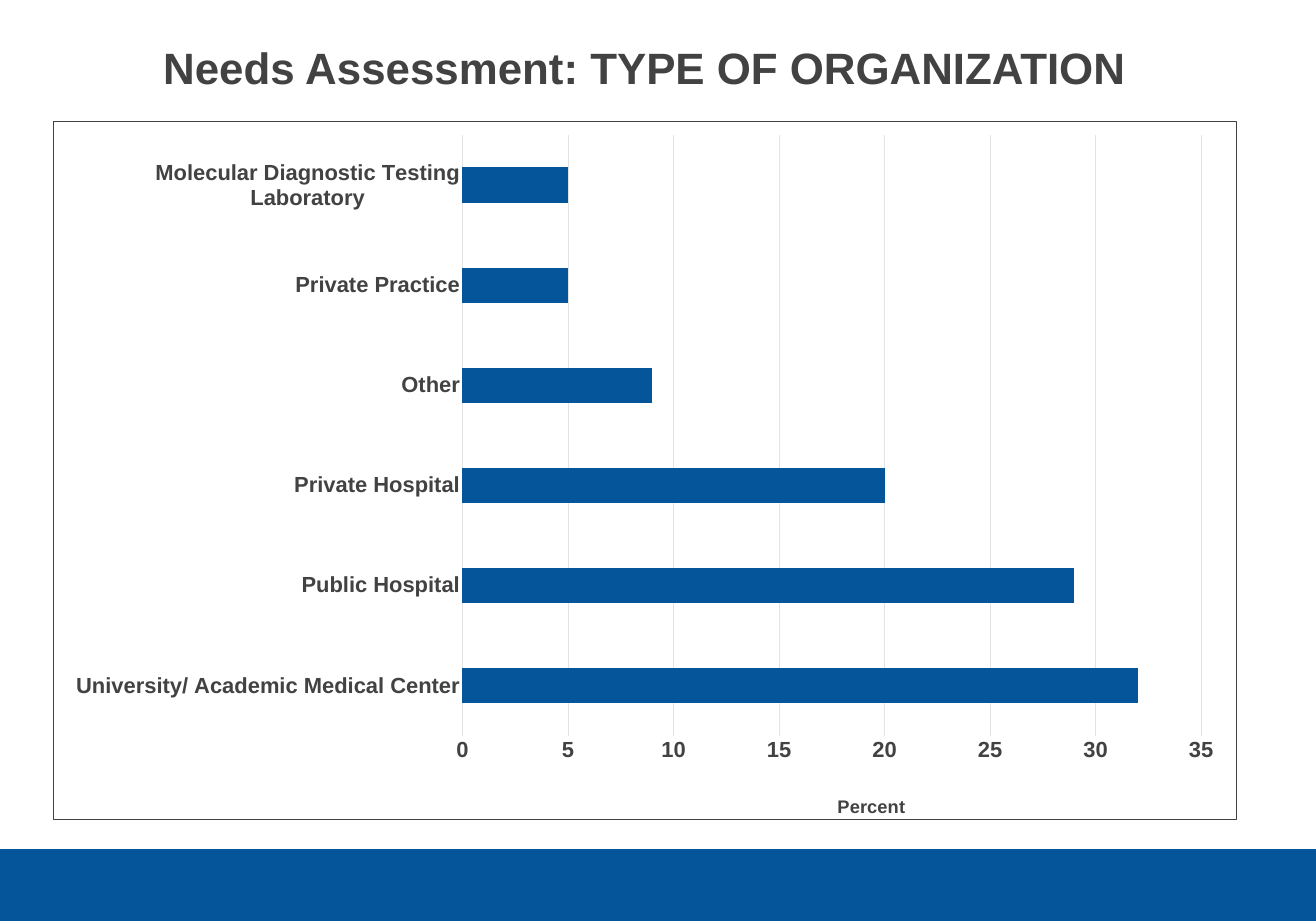
"""Build the needs assessment slide with its bar chart of organization types."""
from pptx import Presentation
from pptx.chart.data import CategoryChartData
from pptx.dml.color import RGBColor
from pptx.enum.chart import XL_CHART_TYPE as CT, XL_TICK_MARK as TM
from pptx.enum.shapes import MSO_SHAPE as MS
from pptx.enum.text import MSO_ANCHOR as MA, PP_ALIGN as PA
from pptx.oxml import parse_xml
from pptx.oxml.ns import nsdecls, qn
from pptx.util import Cm, Pt

COLORS = {"blue": "05559A", "text": "424242", "grid": "E3E3E3", "white": "FFFFFF"}
ORGANIZATIONS = {
    "University/ Academic Medical Center": 32,
    "Public Hospital": 29,
    "Private Hospital": 20,
    "Other": 9,
    "Private Practice": 5,
    "Molecular Diagnostic Testing Laboratory": 5,
}


def rgb(name):
    return RGBColor.from_string(COLORS[name])


def layout_xml(**places):
    parts = "".join(f'<c:{k} val="{v}"/>' for k, v in places.items())
    return parse_xml(f'<c:layout {nsdecls("c")}><c:manualLayout>{parts}'
                     '</c:manualLayout></c:layout>')


def set_layout(parent, layout):
    for old in parent.findall(qn("c:layout")):
        parent.remove(old)
    tx = parent.find(qn("c:tx"))
    if tx is None:
        parent.insert(0, layout)
    else:
        tx.addnext(layout)


class SlideBuilder:
    def __init__(self, prs, font="Arial"):
        self.font = font
        self.slide = prs.slides.add_slide(prs.slide_layouts[6])
        fill = self.slide.background.fill
        fill.solid()
        fill.fore_color.rgb = rgb("white")

    def style(self, font, size, bold=True):
        font.name, font.size, font.bold = self.font, Pt(size), bold
        font.color.rgb = rgb("text")

    def line(self, fmt, color):
        fmt.line.color.rgb = rgb(color)
        fmt.line.width = Pt(0.75)

    def band(self, *box):
        sp = self.slide.shapes.add_shape(MS.RECTANGLE, *map(Cm, box))
        sp.shadow.inherit = False
        sp.fill.solid()
        sp.fill.fore_color.rgb = rgb("blue")
        sp.line.fill.background()

    def title(self, text, *box):
        tf = self.slide.shapes.add_textbox(*map(Cm, box)).text_frame
        tf.word_wrap = True
        tf.vertical_anchor = MA.BOTTOM
        p = tf.paragraphs[0]
        p.text, p.alignment, p.line_spacing = text, PA.CENTER, 0.9
        self.style(p.font, 48)

    def axis(self, axis):
        axis.major_tick_mark = axis.minor_tick_mark = TM.NONE
        self.style(axis.tick_labels.font, 24)

    def bar_chart(self, values, unit, *box):
        data = CategoryChartData()
        data.categories = list(values)
        data.add_series("Series 1", list(values.values()))
        chart = self.slide.shapes.add_chart(CT.BAR_CLUSTERED, *map(Cm, box), data).chart
        chart.has_title = chart.has_legend = False
        self.style(chart.font, 10, bold=False)

        plot = chart.plots[0]
        plot.gap_width, plot.vary_by_categories = 182, False
        fill = plot.series[0].format.fill
        fill.solid()
        fill.fore_color.rgb = rgb("blue")

        cat, val = chart.category_axis, chart.value_axis
        self.axis(cat)
        self.line(cat.format, "grid")
        self.axis(val)
        val.format.line.fill.background()
        val.minimum_scale, val.maximum_scale, val.major_unit = 0, 35, 5
        val.has_major_gridlines = True
        self.line(val.major_gridlines.format, "grid")

        p = val.axis_title.text_frame.paragraphs[0]
        p.text = unit
        self.style(p.font, 20)
        set_layout(val.axis_title._element,
                   layout_xml(xMode="edge", yMode="edge", x=0.66, y=0.96))

        space = chart._chartSpace
        set_layout(space.chart.plotArea,
                   layout_xml(layoutTarget="inner", xMode="edge", yMode="edge",
                              x=0.346, y=0.02, w=0.624, h=0.86))
        space.chart.addnext(parse_xml(
            f'<c:spPr {nsdecls("c", "a")}><a:noFill/><a:ln w="{Pt(0.75)}"><a:solidFill>'
            f'<a:srgbClr val="{COLORS["text"]}"/></a:solidFill></a:ln></c:spPr>'))


def main():
    prs = Presentation()
    prs.slide_width, prs.slide_height = Cm(50.8), Cm(35.56)
    s = SlideBuilder(prs)
    s.band(0, 32.79, 50.8, 2.77)
    s.title("Needs Assessment: TYPE OF ORGANIZATION", 2.97, 1.17, 43.82, 2.57)
    s.bar_chart(ORGANIZATIONS, "Percent", 2.03, 4.67, 45.72, 27.1)
    prs.save("out.pptx")


if __name__ == "__main__":
    main()
